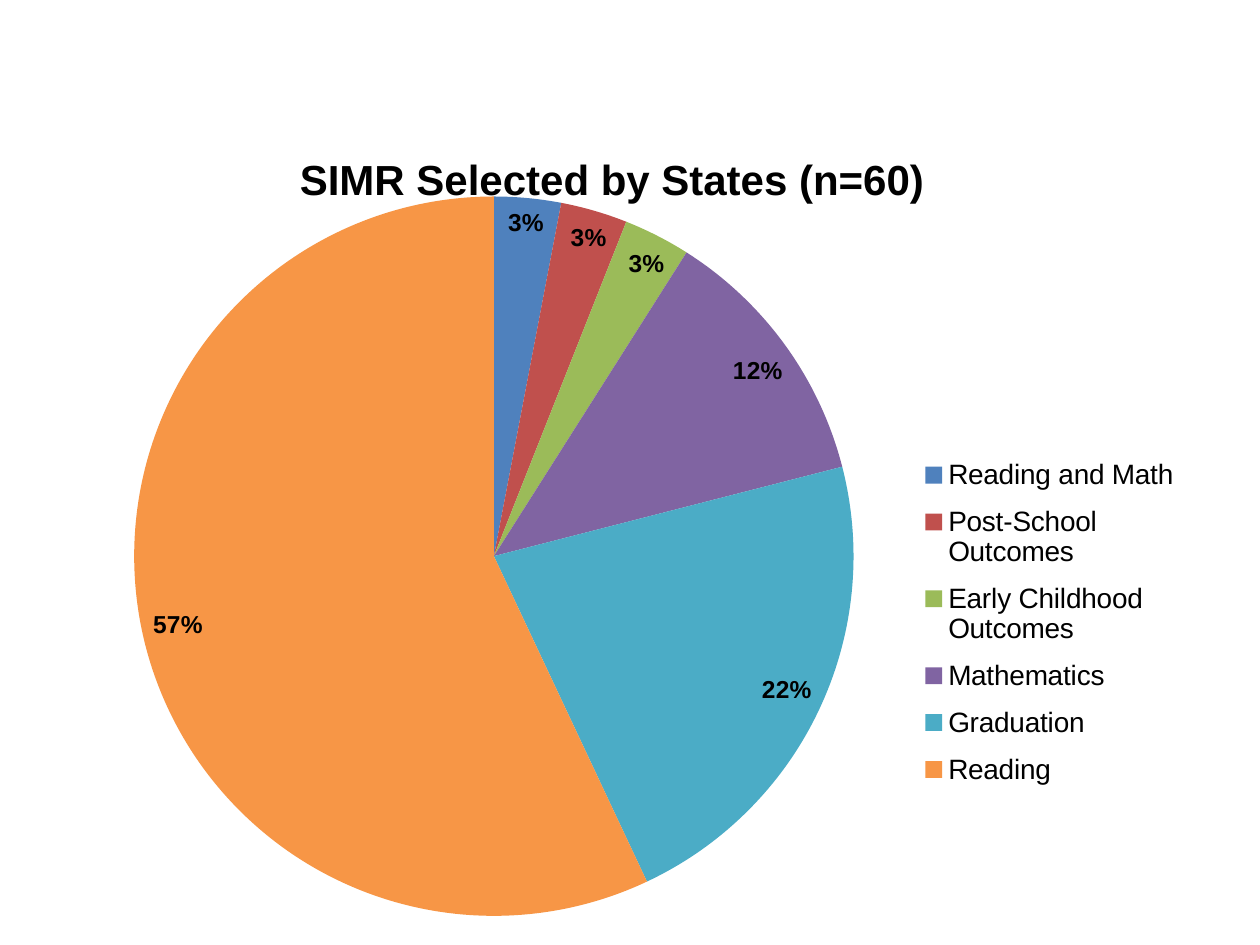
from pptx import Presentation, oxml
from pptx import util as u
from pptx.chart.data import CategoryChartData
from pptx.dml.color import RGBColor
from pptx.enum import chart as ch
from pptx.oxml.ns import qn

FONT = "Arial"
PIE_WIDTH, PIE_HEIGHT = u.Inches(8.88), u.Inches(6.15)
COLORS = {
    "text": "000000",
    "Reading and Math": "4F81BD",
    "Post-School Outcomes": "C0504D",
    "Early Childhood Outcomes": "9BBB59",
    "Mathematics": "8064A2",
    "Graduation": "4BACC6",
    "Reading": "F79646",
}
SHARES = {
    "Reading and Math": 3,
    "Post-School Outcomes": 3,
    "Early Childhood Outcomes": 3,
    "Mathematics": 12,
    "Graduation": 22,
    "Reading": 57,
}


def style_font(font, size, bold=False):
    font.name = FONT
    font.size = u.Pt(size)
    font.bold = bold
    font.color.rgb = RGBColor.from_string(COLORS["text"])


def set_layout(part, index, left, top, width=None, height=None, inner=False):
    for old in part.findall(qn("c:layout")):
        part.remove(old)
    layout = oxml.parse_xml(
        '<c:layout xmlns:c="http://schemas.openxmlformats.org/drawingml/2006/chart">'
        "<c:manualLayout/></c:layout>"
    )
    settings = {"layoutTarget": "inner"} if inner else {}
    settings.update(xMode="edge", yMode="edge",
                    x=u.Inches(left) / PIE_WIDTH, y=u.Inches(top) / PIE_HEIGHT)
    if width:
        settings.update(w=u.Inches(width) / PIE_WIDTH,
                        h=u.Inches(height) / PIE_HEIGHT)
    for tag, value in settings.items():
        entry = oxml.xmlchemy.OxmlElement("c:" + tag)
        entry.set("val", str(value))
        layout[0].append(entry)
    part.insert(index, layout)


def add_share_pie(slide):
    shares = CategoryChartData(number_format="0")
    shares.categories = list(SHARES)
    shares.add_series("Series 1", list(SHARES.values()))
    frame = slide.shapes.add_chart(
        ch.XL_CHART_TYPE.PIE, u.Inches(0.62), u.Inches(1.15),
        PIE_WIDTH, PIE_HEIGHT, shares,
    )
    pie = frame.chart
    style_font(pie.font, 10)
    set_layout(pie._chartSpace.chart.plotArea, 0, 0, 0.41, 6.6, 5.71, inner=True)
    return pie


def add_title(pie, wording):
    pie.has_title = True
    heading = pie.chart_title.text_frame
    heading.text = wording
    style_font(heading.paragraphs[0].runs[0].font, 24, bold=True)
    set_layout(pie.chart_title._element, 1, 1.7, 0)


def add_legend(pie):
    pie.has_legend = True
    legend = pie.legend
    legend.position = ch.XL_LEGEND_POSITION.RIGHT
    legend.include_in_layout = False
    style_font(legend.font, 16)
    set_layout(legend._element, 1, 6.6, 2.37, 2.22, 2.84)


def format_slices(pie):
    plot = pie.plots[0]
    plot.vary_by_categories = True
    for index, category in enumerate(SHARES):
        fill = plot.series[0].points[index].format.fill
        fill.solid()
        fill.fore_color.rgb = RGBColor.from_string(COLORS[category])
    labels = plot.series[0].data_labels
    labels.show_value = False
    labels.show_percentage = True
    labels.number_format = "0%"
    labels.number_format_is_linked = False
    labels.position = ch.XL_LABEL_POSITION.BEST_FIT
    style_font(labels.font, 14, bold=True)


def main():
    deck = Presentation()
    deck.slide_width, deck.slide_height = u.Inches(10), u.Inches(7.5)
    slide = deck.slides.add_slide(deck.slide_layouts[6])
    pie = add_share_pie(slide)
    add_title(pie, "SIMR Selected by States (n=60)")
    add_legend(pie)
    format_slices(pie)
    deck.save("out.pptx")


if __name__ == "__main__":
    main()
